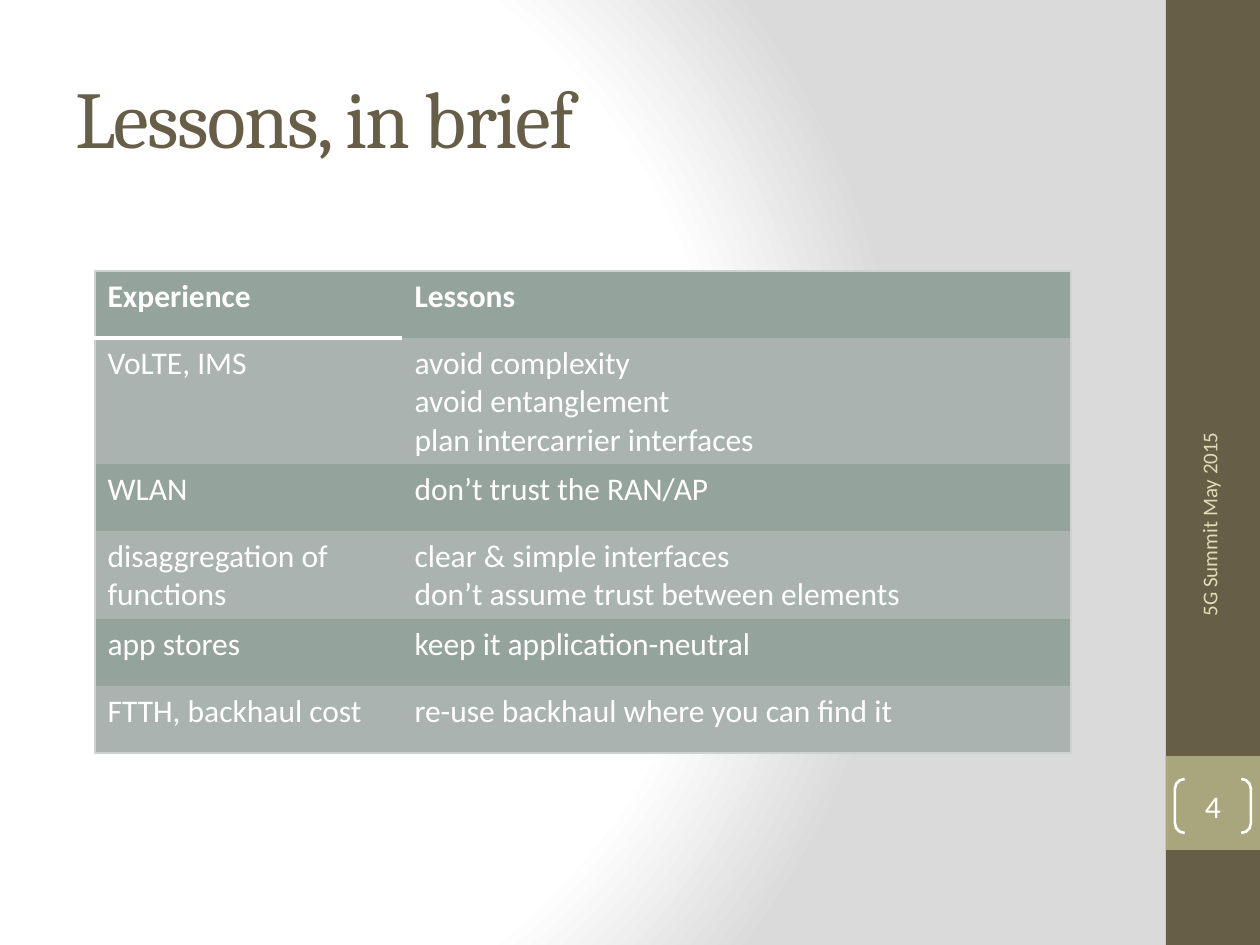
"""Build the "Lessons, in brief" slide with its table and side band."""
from dataclasses import dataclass

from lxml import etree
from pptx import Presentation
from pptx import util as u
from pptx.dml.color import RGBColor
from pptx.enum import shapes, text
from pptx.oxml import ns, parse_xml

PX = 914400 // 126
WHITE = RGBColor(0xFF, 0xFF, 0xFF)
GREY = RGBColor(0xDA, 0xDA, 0xDA)
BROWN = RGBColor(0x67, 0x5E, 0x47)
OLIVE = RGBColor(0xA9, 0xA5, 0x7C)
CREAM = RGBColor(0xDF, 0xDC, 0xB7)
SAGE = RGBColor(0x95, 0xA3, 0x9D)
PALE_SAGE = RGBColor(0xAA, 0xB3, 0xB0)
EDGE = RGBColor(0xCE, 0xD2, 0xD0)
NO_STYLE = "{2D5ABB26-0587-4C30-8999-92F81FD0307C}"


@dataclass(frozen=True)
class Box:
    left: int
    top: int
    width: int
    height: int

    def emu(self) -> tuple[int, ...]:
        return tuple(n * PX for n in (self.left, self.top, self.width, self.height))


@dataclass(frozen=True)
class Style:
    size: int
    color: RGBColor
    font: str = "Calibri"
    bold: bool = False
    align: text.PP_ALIGN = text.PP_ALIGN.LEFT


@dataclass(frozen=True)
class Lesson:
    experience: str
    lessons: tuple[str, ...]


HEADER = Style(18, WHITE, bold=True)
BODY = Style(18, WHITE)
COLUMNS = (307, 669)
ROW_HEIGHT = 67
ROWS = (
    Lesson("Experience", ("Lessons",)),
    Lesson("VoLTE, IMS", ("avoid complexity", "avoid entanglement", "plan intercarrier interfaces")),
    Lesson("WLAN", ("don’t trust the RAN/AP",)),
    Lesson("disaggregation of functions", ("clear & simple interfaces", "don’t assume trust between elements")),
    Lesson("app stores", ("keep it application-neutral",)),
    Lesson("FTTH, backhaul cost", ("re-use backhaul where you can find it",)),
)
BANDS = ((Box(1166, 0, 94, 945), BROWN), (Box(1166, 756, 94, 94), OLIVE))


def write(frame, lines: tuple[str, ...], style: Style):
    for index, line in enumerate(lines):
        paragraph = frame.add_paragraph() if index else frame.paragraphs[0]
        paragraph.alignment = style.align
        run = paragraph.add_run()
        run.text = line
        run.font.name = style.font
        run.font.size = u.Pt(style.size)
        run.font.bold = style.bold
        run.font.color.rgb = style.color
    return run


def paint_background(slide) -> None:
    fill = slide.background.fill
    fill.gradient()
    gradient = slide.element.find(".//" + ns.qn("a:gradFill"))
    stops = "".join(
        f'<a:gs pos="{position * 1000}"><a:srgbClr val="{color}"/></a:gs>'
        for position, color in ((0, WHITE), (75, WHITE), (100, GREY))
    )
    replacement = parse_xml(
        f'<a:gradFill {ns.nsdecls("a")} rotWithShape="1"><a:gsLst>{stops}</a:gsLst>'
        '<a:path path="circle"><a:fillToRect l="20000" t="50000" r="100000" b="50000"/>'
        "</a:path></a:gradFill>"
    )
    gradient.getparent().replace(gradient, replacement)


def add_band(slide, box: Box, color: RGBColor) -> None:
    shape = slide.shapes.add_shape(shapes.MSO_SHAPE.RECTANGLE, *box.emu())
    shape.shadow.inherit = False
    shape.fill.solid()
    shape.fill.fore_color.rgb = color
    shape.line.fill.background()


def add_text(slide, box: Box, line: str, style: Style, rotation: int = 0):
    shape = slide.shapes.add_textbox(*box.emu())
    shape.rotation = rotation
    shape.text_frame.word_wrap = True
    shape.text_frame.vertical_anchor = text.MSO_ANCHOR.MIDDLE
    return write(shape.text_frame, (line,), style)


def add_border(cell, side: str, color: RGBColor, points: int) -> None:
    properties = cell._tc.get_or_add_tcPr()
    line = etree.SubElement(properties, ns.qn(f"a:ln{side}"), w=str(u.Pt(points)))
    fill = etree.SubElement(line, ns.qn("a:solidFill"))
    etree.SubElement(fill, ns.qn("a:srgbClr"), val=str(color))


def add_lessons_table(slide, left: int, top: int) -> None:
    last_row, last_column = len(ROWS) - 1, len(COLUMNS) - 1
    box = Box(left, top, sum(COLUMNS), ROW_HEIGHT * len(ROWS))
    table = slide.shapes.add_table(len(ROWS), len(COLUMNS), *box.emu()).table
    table.horz_banding = False
    table._tbl.tblPr.find(ns.qn("a:tableStyleId")).text = NO_STYLE
    for column, width in zip(table.columns, COLUMNS):
        column.width = width * PX
    for i, lesson in enumerate(ROWS):
        table.rows[i].height = ROW_HEIGHT * PX
        for j, lines in enumerate(((lesson.experience,), lesson.lessons)):
            cell = table.cell(i, j)
            write(cell.text_frame, lines, BODY if i else HEADER)
            outer = {"L": j == 0, "R": j == last_column, "T": i == 0, "B": i == last_row}
            for side, present in outer.items():
                if present:
                    add_border(cell, side, EDGE, 1)
            if i == j == 0:
                add_border(cell, "B", WHITE, 3)
            cell.fill.solid()
            cell.fill.fore_color.rgb = PALE_SAGE if i % 2 else SAGE


def add_slide_number(slide, box: Box, number: str) -> None:
    shape = slide.shapes.add_shape(shapes.MSO_SHAPE.DOUBLE_BRACKET, *box.emu())
    shape.adjustments[0] = 0.18
    shape.shadow.inherit = False
    shape.fill.background()
    shape.line.color.rgb = WHITE
    shape.line.width = u.Pt(1.5)
    frame = shape.text_frame
    frame.margin_left = frame.margin_right = frame.margin_top = frame.margin_bottom = 0
    frame.vertical_anchor = text.MSO_ANCHOR.MIDDLE
    write(frame, (number,), Style(18, WHITE, align=text.PP_ALIGN.CENTER))


def main() -> None:
    presentation = Presentation()
    presentation.slide_width = u.Inches(10)
    presentation.slide_height = u.Inches(7.5)
    slide = presentation.slides.add_slide(presentation.slide_layouts[6])
    paint_background(slide)
    for box, color in BANDS:
        add_band(slide, box, color)
    title = add_text(slide, Box(63, 38, 1050, 157), "Lessons, in brief", Style(46, BROWN, "Cambria"))
    title.font._element.set("spc", "-100")
    add_lessons_table(slide, 95, 271)
    footer = Style(12, CREAM, align=text.PP_ALIGN.RIGHT)
    add_text(slide, Box(1046, 558, 326, 50), "5G Summit May 2015", footer, 270)
    add_slide_number(slide, Box(1175, 779, 76, 54), "4")
    presentation.save("out.pptx")


if __name__ == "__main__":
    main()
